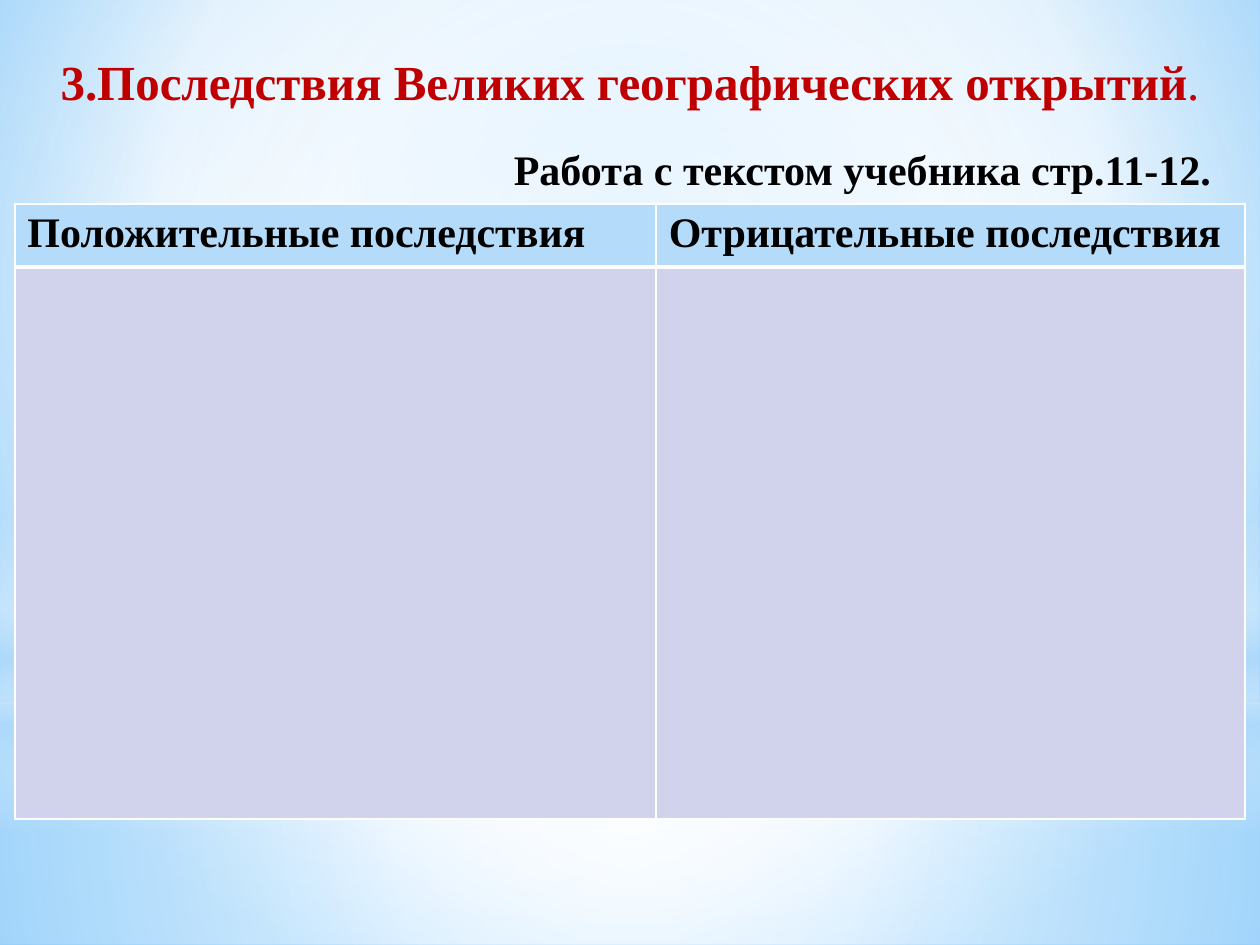
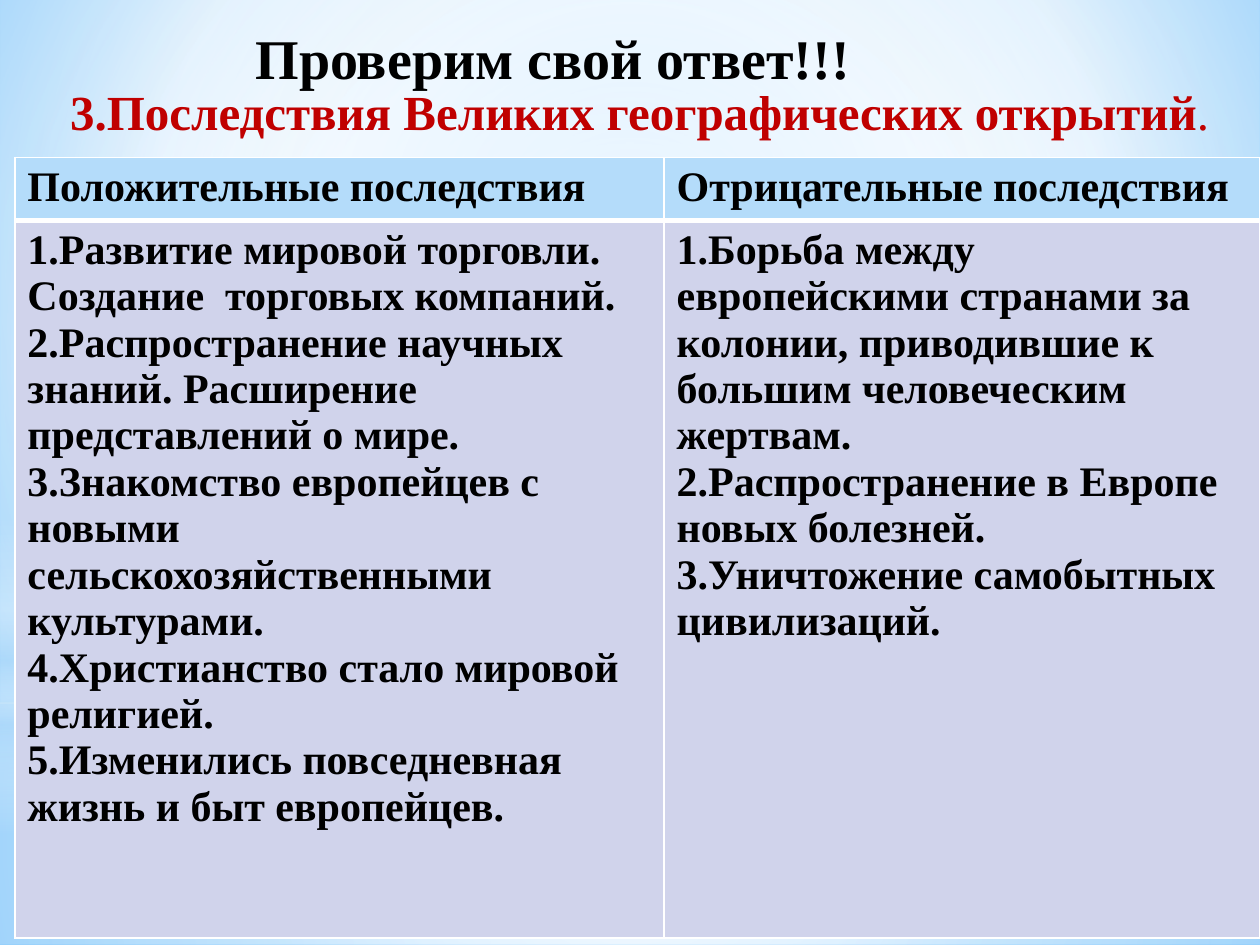
from dataclasses import dataclass
from pptx import Presentation
from pptx.dml.color import RGBColor
from pptx.enum.shapes import MSO_SHAPE
from pptx.enum.text import PP_ALIGN
from pptx.oxml import parse_xml
from pptx.oxml.ns import nsdecls, qn
from pptx.util import Pt


@dataclass(frozen=True)
class Theme:
    """Hold the colours, font and type sizes of the deck."""
    font: str = "Times New Roman"
    red: str = "C00000"
    black: str = "000000"
    white: str = "FFFFFF"
    sky: str = "B4DCFA"
    lilac: str = "D0D3EB"
    glow: str = "9ED5FF"
    edge: str = "5BB9FF"
    large: int = 32
    title: int = 28
    body: int = 24
    thin: int = 1
    thick: int = 3


THEME = Theme()
WIDE, HIGH = 720, 540
SPLIT = 401.76
CENTRE = (50, 50, 50, 50)
HEADS = ("Положительные последствия", "Отрицательные последствия")
GOOD = (
    "1.Развитие мировой торговли. Создание  торговых компаний.",
    "2.Распространение научных знаний. Расширение представлений о мире.",
    "3.Знакомство европейцев с новыми сельскохозяйственными культурами.",
    "4.Христианство стало мировой религией.",
    "5.Изменились повседневная жизнь и быт европейцев.",
)
BAD = (
    "1.Борьба между европейскими странами за колонии, приводившие к большим человеческим жертвам.",
    "2.Распространение в Европе новых болезней.",
    "3.Уничтожение самобытных цивилизаций.",
)


def paint(fill, root, stops, focus=None):
    """Give a fill a gradient, round a focus or from top to bottom."""
    fill.solid()
    marks = "".join(
        f'<a:gs pos="{pos * 1000}"><a:srgbClr val="{tone}">'
        f'<a:alpha val="{alpha * 1000}"/></a:srgbClr></a:gs>'
        for pos, tone, alpha in stops)
    if focus:
        sides = " ".join(f'{side}="{part * 1000}"' for side, part in zip("ltrb", focus))
        way = f'<a:path path="circle"><a:fillToRect {sides}/></a:path>'
    else:
        way = '<a:lin ang="5400000" scaled="0"/>'
    old = root.find(".//" + qn("a:solidFill"))
    old.getparent().replace(old, parse_xml(
        f'<a:gradFill {nsdecls("a")} rotWithShape="1"><a:gsLst>{marks}</a:gsLst>{way}</a:gradFill>'))


def veil(slide, kind, box, stops, focus=None):
    """Lay one soft gradient shape in a box."""
    shape = slide.shapes.add_shape(kind, *map(Pt, box))
    shape.shadow.inherit = False
    shape.line.fill.background()
    paint(shape.fill, shape.element.spPr, stops, focus)


def backdrop(slide, box):
    """Cover a box with the four layers of light."""
    left, top, width, height = box
    white, sky = THEME.white, THEME.sky
    veil(slide, MSO_SHAPE.RECTANGLE, (left, top + SPLIT, width, height - SPLIT),
         ((0, white, 91), (37, white, 76), (100, sky, 79)), CENTRE)
    veil(slide, MSO_SHAPE.RECTANGLE, (left, top, width, SPLIT),
         ((0, white, 89), (48, white, 62), (100, sky, 79)), CENTRE)
    veil(slide, MSO_SHAPE.RECTANGLE, (left, top + 296.64, width, 180),
         ((0, white, 0), (29, white, 30), (45, sky, 40),
          (55, white, 26), (65, sky, 60), (100, white, 0)))
    veil(slide, MSO_SHAPE.OVAL, (left, top + 126, width, SPLIT),
         ((0, white, 100), (56, white, 0)), CENTRE)


def write(para, text, size, tone, bold=True):
    """Add one run of text to a paragraph."""
    run = para.add_run()
    run.text = text
    font = run.font
    font.name, font.size, font.bold = THEME.font, Pt(size), bold
    font.color.rgb = RGBColor.from_string(tone)


def label(slide, box):
    """Add an empty text box and return its first paragraph."""
    frame = slide.shapes.add_textbox(*map(Pt, box)).text_frame
    frame.word_wrap = True
    return frame.paragraphs[0]


def heading(slide, box):
    """Write the red lesson title across a box."""
    para = label(slide, box)
    para.alignment = PP_ALIGN.CENTER
    write(para, "3.Последствия Великих географических открытий", THEME.title, THEME.red)
    write(para, ".", THEME.title, THEME.red, False)


def note(slide, box, text, size):
    """Write a bold black line in a box."""
    write(label(slide, box), text, size, THEME.black)


def border(cell, top, base):
    """Draw white lines round a cell."""
    props = cell._tc.get_or_add_tcPr()
    sides = (("L", THEME.thin), ("R", THEME.thin), ("T", top), ("B", base))
    for spot, (side, width) in enumerate(sides):
        props.insert(spot, parse_xml(
            f'<a:ln{side} {nsdecls("a")} w="{Pt(width)}"><a:solidFill>'
            f'<a:srgbClr val="{THEME.white}"/></a:solidFill></a:ln{side}>'))


def fill_cell(cell, lines, tone, top, base):
    """Set the fill, lines and text of a cell."""
    cell.fill.solid()
    cell.fill.fore_color.rgb = RGBColor.from_string(tone)
    border(cell, top, base)
    frame = cell.text_frame
    for spot, line in enumerate(lines):
        para = frame.add_paragraph() if spot else frame.paragraphs[0]
        write(para, line, THEME.body, THEME.black)


def effects(slide, box, first, lists):
    """Build the table of good and bad effects in a box."""
    width, height = box[2:]
    table = slide.shapes.add_table(2, 2, *map(Pt, box)).table
    table.first_row = table.horz_banding = False
    for col, span in zip(table.columns, (first, width - first)):
        col.width = Pt(span)
    for row, span in zip(table.rows, (36, height - 36)):
        row.height = Pt(span)
    for col, (head, lines) in enumerate(zip(HEADS, lists)):
        fill_cell(table.cell(0, col), (head,), THEME.sky, THEME.thin, THEME.thick)
        fill_cell(table.cell(1, col), lines, THEME.lilac, THEME.thick, THEME.thin)


def start(deck):
    """Add a blank slide with the backdrop."""
    slide = deck.slides.add_slide(deck.slide_layouts[6])
    backdrop(slide, (0, 0, WIDE, HIGH))
    return slide


def task(deck):
    """Make the slide with the empty table."""
    slide = start(deck)
    heading(slide, (20, 26, 680, 41))
    effects(slide, (8.5, 116.5, 703, 351.5), 366.5, ((), ()))
    note(slide, (286.5, 78.5, 414, 36), "Работа с текстом учебника стр.11-12.", THEME.body)


def answer(deck):
    """Make the slide with the filled table."""
    slide = start(deck)
    heading(slide, (31, 43, 669, 41))
    effects(slide, (8.5, 90, 711.5, 446), 371, (GOOD, BAD))
    note(slide, (139, 10, 437, 46), "Проверим свой ответ!!!", THEME.large)


def main():
    """Build and save the deck."""
    deck = Presentation()
    deck.slide_width, deck.slide_height = Pt(WIDE), Pt(HIGH)
    master = deck.slide_master
    paint(master.background.fill, master.element.cSld,
          ((0, THEME.glow, 100), (60, THEME.white, 100), (100, THEME.edge, 100)),
          (20, 10, 20, 60))
    task(deck)
    answer(deck)
    deck.save("out.pptx")


if __name__ == "__main__":
    main()
